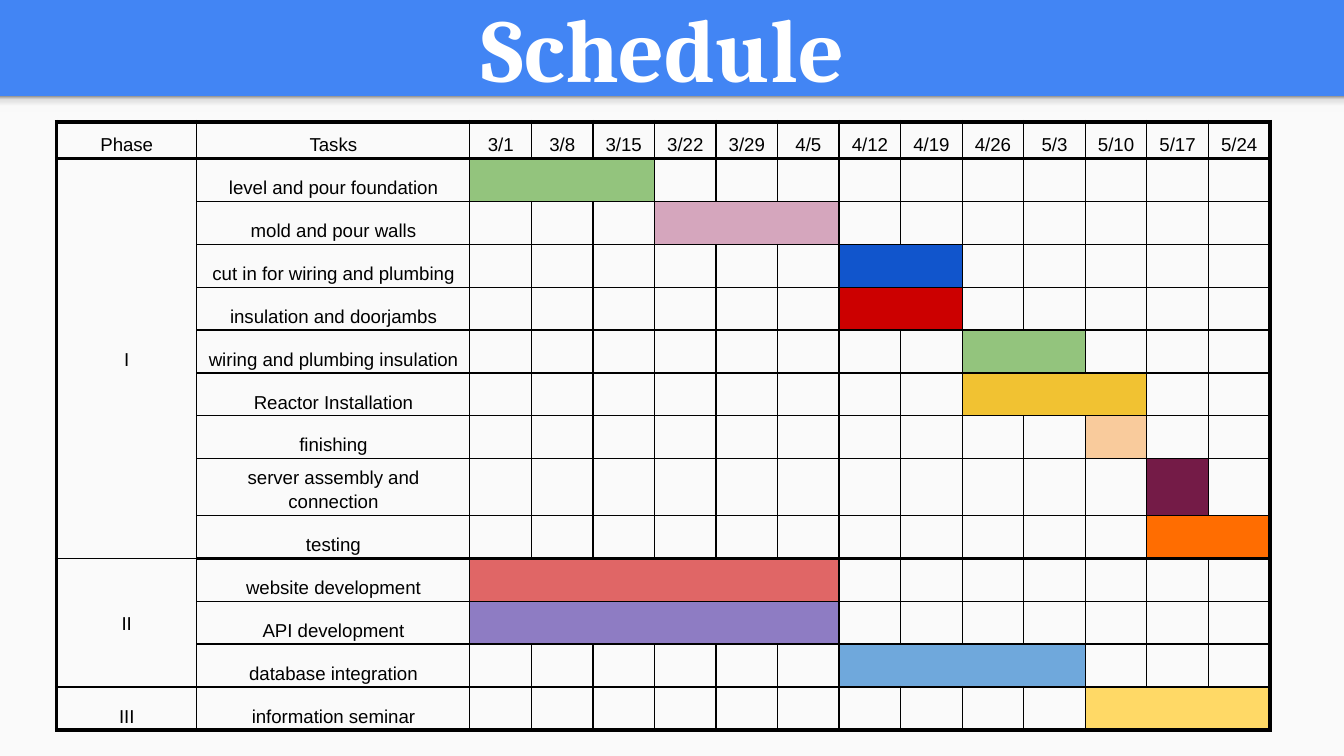
import dataclasses

import lxml.etree
import pptx
import pptx.dml.color
import pptx.enum.shapes
import pptx.enum.text
import pptx.oxml.ns
import pptx.util

Cm, Pt = pptx.util.Cm, pptx.util.Pt
qn = pptx.oxml.ns.qn
ALIGN = pptx.enum.text.PP_ALIGN
ANCHOR = pptx.enum.text.MSO_ANCHOR


@dataclasses.dataclass(frozen=True)
class Theme:
    header: str = "4285F4"
    page: str = "FAFAFA"
    title: str = "FFFFFF"
    ink: str = "000000"
    shadow: tuple = ((0, "F9F9F9"), (36, "F9F9F9"), (80, "DEDEDE"), (100, "999999"))
    title_font: str = "Cambria"
    body_font: str = "Arial"
    title_size: int = 48
    body_size: int = 10
    thin: float = 0.75
    medium: float = 1.5
    thick: float = 2.25


DATES = ["3/1", "3/8", "3/15", "3/22", "3/29", "4/5", "4/12", "4/19",
         "4/26", "5/3", "5/10", "5/17", "5/24"]
# Each task: name, first week, number of weeks, bar colour
PHASES = {
    "I": [
        ("level and pour foundation", "3/1", 3, "93C47D"),
        ("mold and pour walls", "3/22", 3, "D5A6BD"),
        ("cut in for wiring and plumbing", "4/12", 2, "1155CC"),
        ("insulation and doorjambs", "4/12", 2, "CC0000"),
        ("wiring and plumbing insulation", "4/26", 2, "93C47D"),
        ("Reactor Installation", "4/26", 3, "F1C232"),
        ("finishing", "5/10", 1, "F9CB9C"),
        ("server assembly and connection", "5/17", 1, "741B47"),
        ("testing", "5/17", 2, "FF6D01"),
    ],
    "II": [
        ("website development", "3/1", 6, "E06666"),
        ("API development", "3/1", 6, "8E7CC3"),
        ("database integration", "4/12", 4, "6FA8DC"),
    ],
    "III": [("information seminar", "5/10", 3, "FFD966")],
}


class ScheduleSlide:
    def __init__(self, presentation, theme):
        self.theme = theme
        self.slide = presentation.slides.add_slide(presentation.slide_layouts[6])
        background = self.slide.background.fill
        background.solid()
        background.fore_color.rgb = self.rgb(theme.header)

    @staticmethod
    def rgb(value):
        return pptx.dml.color.RGBColor.from_string(value)

    def add_text(self, frame, text, font, size, color, bold=False):
        paragraph = frame.paragraphs[0]
        paragraph.alignment = ALIGN.CENTER
        run = paragraph.add_run()
        run.text = text
        run.font.name, run.font.size, run.font.bold = font, Pt(size), bold
        run.font.color.rgb = self.rgb(color)
        return paragraph

    def panel(self, left, top, width, height):
        panel = self.slide.shapes.add_shape(
            pptx.enum.shapes.MSO_SHAPE.RECTANGLE, Cm(left), Cm(top), Cm(width), Cm(height))
        panel.shadow.inherit = False
        panel.line.fill.background()
        panel.fill.solid()
        panel.fill.fore_color.rgb = self.rgb(self.theme.page)
        return panel

    def shadow_strip(self, left, top, width, height):
        strip = self.panel(left, top, width, height)
        strip.fill.gradient()
        strip.fill.gradient_angle = 90
        stops = next(strip._element.iter(qn("a:gsLst")))
        for stop in list(stops):
            stops.remove(stop)
        for position, color in self.theme.shadow:
            stop = lxml.etree.SubElement(stops, qn("a:gs"), pos=str(position * 1000))
            lxml.etree.SubElement(stop, qn("a:srgbClr"), val=color)

    def title(self, text, left, top, width, height):
        frame = self.slide.shapes.add_textbox(Cm(left), Cm(top), Cm(width), Cm(height)).text_frame
        frame.word_wrap = True
        frame.vertical_anchor = ANCHOR.MIDDLE
        frame.margin_left = frame.margin_right = Cm(0.25)
        frame.margin_top = frame.margin_bottom = Cm(0.25)
        theme = self.theme
        self.add_text(frame, text, theme.title_font, theme.title_size, theme.title, bold=True)

    def table(self, left, top, widths, heights):
        table = self.slide.shapes.add_table(
            len(heights), len(widths), Cm(left), Cm(top), Cm(sum(widths)), Cm(sum(heights))).table
        table.first_row = table.horz_banding = False
        for column, width in zip(table.columns, widths):
            column.width = Cm(width)
        for row, height in zip(table.rows, heights):
            row.height = Cm(height)
        return table

    def cell(self, cell, text, borders, fill=None, anchor=ANCHOR.BOTTOM):
        """Style one cell; borders maps L, R, T and B to line widths in points."""
        theme = self.theme
        cell.margin_left = cell.margin_right = Cm(0.08)
        cell.margin_top = cell.margin_bottom = Cm(0.05)
        cell.vertical_anchor = anchor
        properties = cell._tc.get_or_add_tcPr()
        for side, width in borders.items():
            line = lxml.etree.SubElement(properties, qn(f"a:ln{side}"), w=str(int(Pt(width))))
            color = lxml.etree.SubElement(line, qn("a:solidFill"))
            lxml.etree.SubElement(color, qn("a:srgbClr"), val=theme.ink)
        if fill:
            cell.fill.solid()
            cell.fill.fore_color.rgb = self.rgb(fill)
        else:
            cell.fill.background()
        if text:
            paragraph = self.add_text(cell.text_frame, text, theme.body_font,
                                      theme.body_size, theme.ink)
            paragraph.line_spacing = 1.15
        else:
            lxml.etree.SubElement(cell.text_frame.paragraphs[0]._p, qn("a:endParaRPr"),
                                  sz=str(theme.body_size * 100))

    def gantt(self, phases, dates, left, top):
        theme = self.theme
        row_count = 1 + sum(len(tasks) for tasks in phases.values())
        column_count = 2 + len(dates)
        table = self.table(left, top, [2.65, 5.16] + [15.13 / len(dates)] * len(dates),
                           [0.7] + [0.81] * (row_count - 1))

        texts = {(0, column): text for column, text in enumerate(["Phase", "Tasks", *dates])}
        fills, phase_ends, row = {}, [], 1
        for phase, tasks in phases.items():
            texts[row, 0] = phase
            if len(tasks) > 1:
                table.cell(row, 0).merge(table.cell(row + len(tasks) - 1, 0))
            for task, start, weeks, color in tasks:
                texts[row, 1] = task
                first = 2 + dates.index(start)
                fills[row, first] = color
                if weeks > 1:
                    table.cell(row, first).merge(table.cell(row, first + weeks - 1))
                row += 1
            phase_ends.append(row)

        def horizontal(boundary, column):
            if boundary in (0, 1, row_count):
                return theme.thick
            if boundary == phase_ends[0] and column == 0:
                return theme.thin
            return theme.medium if boundary in phase_ends else theme.thin

        def vertical(boundary):
            return theme.thick if boundary in (0, column_count) else theme.thin

        for row in range(row_count):
            for column in range(column_count):
                cell = table.cell(row, column)
                origin = cell.is_merge_origin
                bottom = row + (cell.span_height if origin else 1)
                right = column + (cell.span_width if origin else 1)
                borders = {"L": vertical(column), "R": vertical(right),
                           "T": horizontal(row, column), "B": horizontal(bottom, column)}
                anchor = ANCHOR.MIDDLE if origin and column == 0 else ANCHOR.BOTTOM
                self.cell(cell, texts.get((row, column)), borders,
                          fills.get((row, column)), anchor)


def main():
    presentation = pptx.Presentation()
    presentation.slide_width, presentation.slide_height = Cm(25.4), Cm(14.29)
    schedule = ScheduleSlide(presentation, Theme())
    schedule.panel(0, 1.82, 25.4, 12.47)
    schedule.shadow_strip(0, 1.82, 25.4, 0.3)
    schedule.title("Schedule", 0.28, 0.05, 24.51, 1.68)
    schedule.gantt(PHASES, DATES, 1.07, 2.3)
    presentation.save("out.pptx")


if __name__ == "__main__":
    main()
